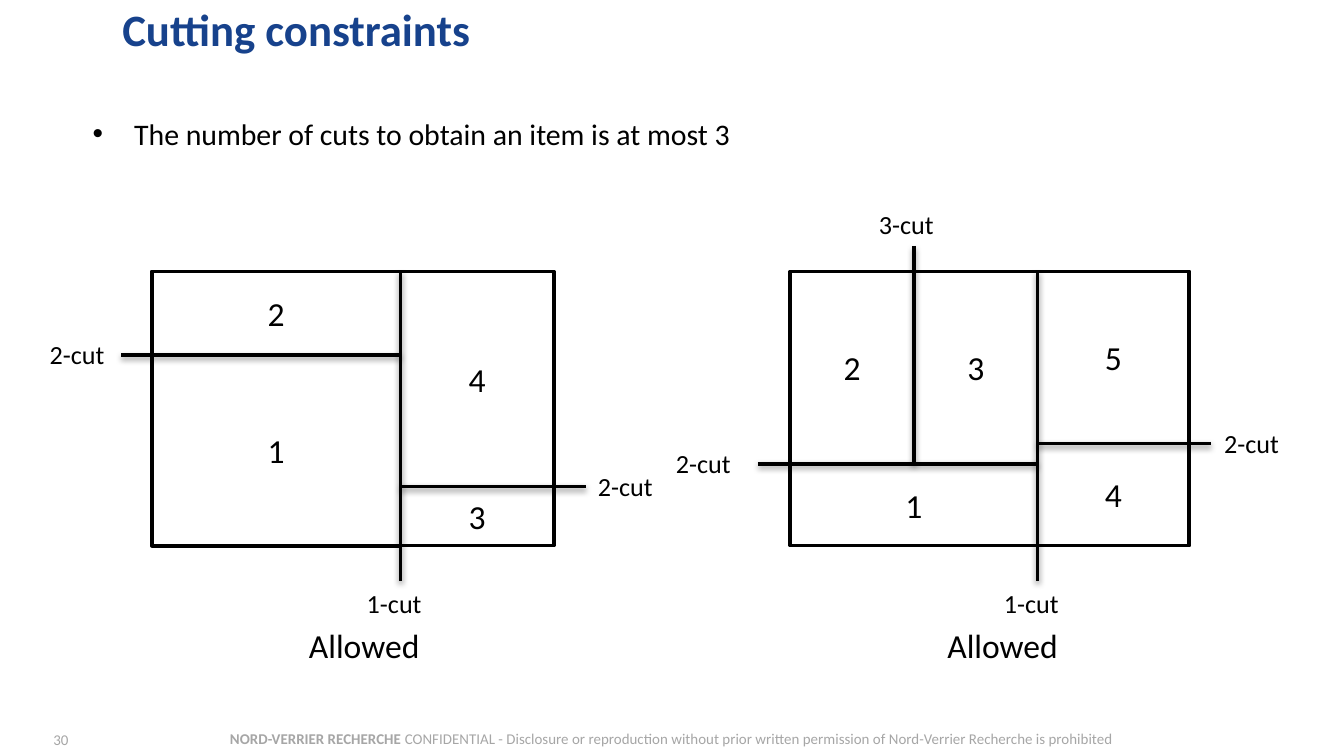
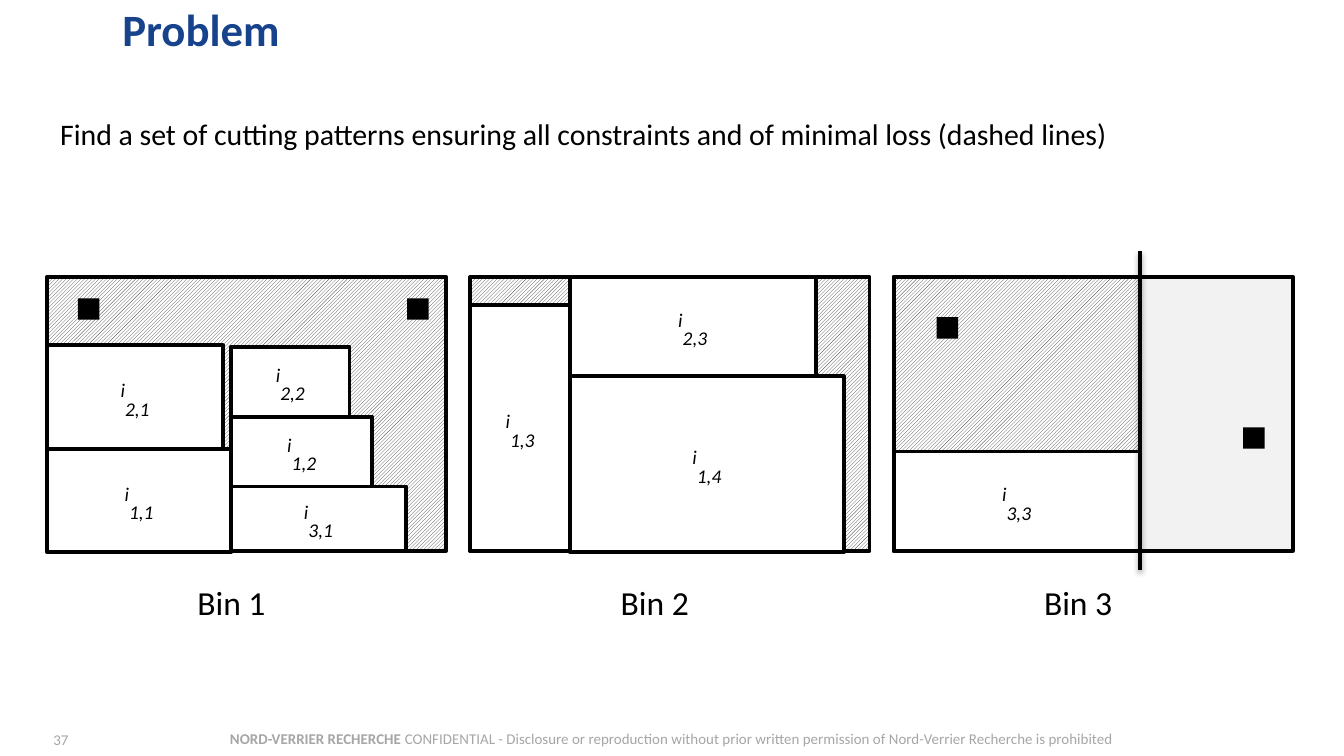
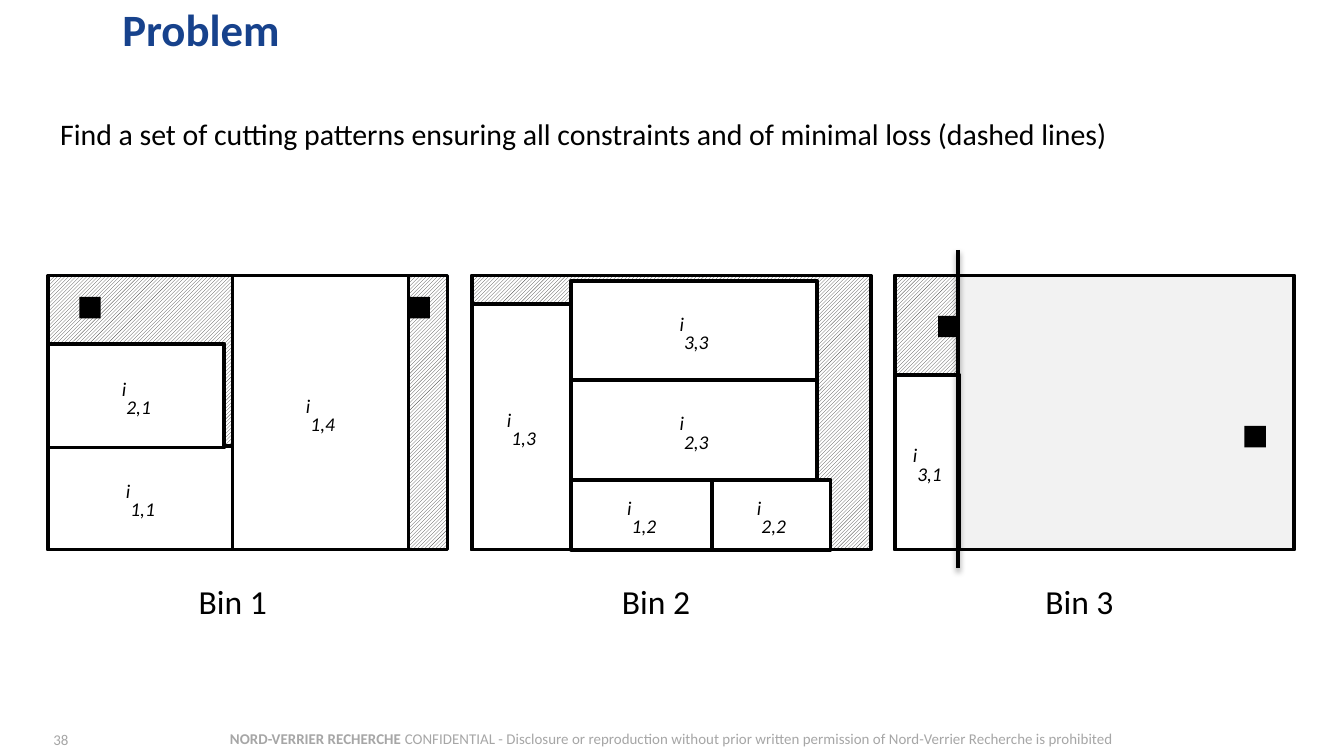
from lxml.etree import SubElement
from pptx import Presentation
from pptx.dml.color import RGBColor
from pptx.enum.dml import MSO_PATTERN
from pptx.enum.shapes import MSO_CONNECTOR, MSO_SHAPE
from pptx.enum.text import MSO_ANCHOR as ANCHOR, MSO_AUTO_SIZE as AUTO_SIZE, PP_ALIGN as ALIGN
from pptx.oxml.ns import qn
from pptx.util import Inches, Pt

BLUE = RGBColor(0x17, 0x42, 0x8C)
BLACK = RGBColor(0, 0, 0)
WHITE = RGBColor(0xFF, 0xFF, 0xFF)
FOOTER_GREY = RGBColor(0xA6, 0xA6, 0xA6)
HATCH_GREY = RGBColor(0x41, 0x41, 0x40)
LEFTOVER_GREY = RGBColor(0xF2, 0xF2, 0xF2)
FONT = "Calibri"
HATCH = "hatch"

BIN_SIZE = (2.97, 2.04)
BIN_STEP = 3.15
DEFECT_SIZE = 0.16
DEFECTS = [[(0.23, 0.16), (2.68, 0.16)], [], [(2.6, 1.12), (0.32, 0.3)]]
ITEM_SIZES = {
    "1,1": (1.37, 0.77), "2,1": (1.31, 0.77),
    "1,2": (1.05, 0.52), "2,2": (0.88, 0.52), "3,1": (1.3, 0.48),
    "1,3": (0.74, 1.83), "2,3": (1.83, 0.74), "3,3": (1.83, 0.74),
    "1,4": (2.04, 1.31),
}


def box(*lengths):
    return [Inches(length) for length in lengths]


def set_font(paragraph, size, color=BLACK, bold=False, italic=False):
    font = paragraph.font
    font.name, font.size, font.bold, font.italic = FONT, Pt(size), bold, italic
    font.color.rgb = color


def add_text(slide, text, left, top, width, height, size, align=ALIGN.LEFT, color=BLACK):
    frame = slide.shapes.add_textbox(*box(left, top, width, height)).text_frame
    frame.word_wrap = True
    paragraph = frame.paragraphs[0]
    paragraph.text = text
    paragraph.alignment = align
    set_font(paragraph, size, color)
    return frame


def add_rectangle(slide, left, top, width, height, fill=None, outlined=True):
    shape = slide.shapes.add_shape(MSO_SHAPE.RECTANGLE, *box(left, top, width, height))
    shape.shadow.inherit = False
    if fill is None:
        shape.fill.background()
    elif fill == HATCH:
        shape.fill.patterned()
        shape.fill.pattern = MSO_PATTERN.DARK_UPWARD_DIAGONAL
        shape.fill.fore_color.rgb = HATCH_GREY
        shape.fill.back_color.rgb = WHITE
    else:
        shape.fill.solid()
        shape.fill.fore_color.rgb = fill
    if outlined:
        shape.line.color.rgb = BLACK
        shape.line.width = Pt(2)
    else:
        shape.line.fill.background()
    return shape


def add_cut(slide, x1, y1, x2, y2):
    cut = slide.shapes.add_connector(MSO_CONNECTOR.STRAIGHT, *box(x1, y1, x2, y2))
    cut.line.color.rgb = BLACK
    cut.line.width = Pt(2)
    effects = SubElement(cut._element.spPr, qn("a:effectLst"))
    shadow = SubElement(effects, qn("a:outerShdw"), blurRad=str(Pt(3.1)), dist=str(Pt(1.6)),
                        dir="5400000", rotWithShape="0")
    color = SubElement(shadow, qn("a:srgbClr"), val=str(BLACK))
    SubElement(color, qn("a:alpha"), val="38000")
    return cut


def add_footer(slide, number):
    frame = add_text(slide, "NORD-VERRIER RECHERCHE ", 0.64, 5.38, 8.72, 0.24, 8,
                     ALIGN.CENTER, FOOTER_GREY)
    paragraph = frame.paragraphs[0]
    paragraph.runs[0].font.bold = True
    paragraph.add_run().text = ("CONFIDENTIAL - Disclosure or reproduction without prior written "
                                "permission of Nord-Verrier Recherche is prohibited")
    frame = add_text(slide, str(number), 0, 5.44, 0.55, 0.13, 8, ALIGN.RIGHT, FOOTER_GREY)
    frame.vertical_anchor = ANCHOR.MIDDLE
    frame.margin_left = frame.margin_right = Inches(0.04)
    frame.margin_top = frame.margin_bottom = 0


def add_titled_slide(presentation, title, number):
    slide = presentation.slides.add_slide(presentation.slide_layouts[5])
    placeholder = slide.shapes.title
    placeholder.left, placeholder.top, placeholder.width, placeholder.height = box(
        0.81, 0.01, 8.94, 0.4)
    frame = placeholder.text_frame
    frame.text = title
    frame.auto_size = AUTO_SIZE.NONE
    frame.vertical_anchor = ANCHOR.TOP
    frame.margin_left = frame.margin_right = Inches(0.1)
    frame.margin_top = frame.margin_bottom = 0
    paragraph = frame.paragraphs[0]
    paragraph.alignment = ALIGN.LEFT
    set_font(paragraph, 24, BLUE, bold=True)
    add_footer(slide, number)
    return slide


def add_statement(slide, text, left, width, bulleted=False):
    frame = slide.shapes.add_textbox(*box(left, 0.84, width, 4.17)).text_frame
    frame.word_wrap = True
    paragraph = frame.paragraphs[0]
    paragraph.text = text
    paragraph.line_spacing = 0.9
    if bulleted:
        properties = paragraph._p.get_or_add_pPr()
        properties.set("marL", str(Inches(0.31)))
        properties.set("indent", str(-Inches(0.31)))
        SubElement(properties, qn("a:buFont"), typeface="Arial")
        SubElement(properties, qn("a:buChar"), char="•")
    set_font(paragraph, 16)


def add_cutting_pattern(slide, left, top, pieces, cuts, labels):
    shapes = {}
    for name, x, y, width, height in pieces:
        shape = add_rectangle(slide, left + x, top + y, width, height)
        paragraph = shape.text_frame.paragraphs[0]
        paragraph.text = name
        set_font(paragraph, 18)
        shapes[name] = shape
    lines = [add_cut(slide, left + x1, top + y1, left + x2, top + y2)
             for x1, y1, x2, y2 in cuts]
    for text, x, y in labels:
        add_text(slide, text, left + x, top + y, 0.71, 0.34, 14)
    add_text(slide, "Allowed", left + 0.44, top + 2.58, 2.28, 0.4, 18, ALIGN.CENTER)
    return shapes, lines


def add_item(slide, name, left, top, turned=False):
    width, height = ITEM_SIZES[name]
    if turned:
        width, height = height, width
    shape = add_rectangle(slide, left, top, width, height, WHITE)
    paragraph = shape.text_frame.paragraphs[0]
    for text, baseline in (("i", 30000), (name, -25000)):
        run = paragraph.add_run()
        run.text = text
        run.font._element.set("baseline", str(baseline))
    set_font(paragraph, 18, italic=True)


def add_bin(slide, left, top, caption, items, defects, waste=None):
    add_rectangle(slide, left, top, *BIN_SIZE, LEFTOVER_GREY if waste else HATCH)
    if waste:
        add_rectangle(slide, left, top, *waste, HATCH)
    for name, x, y, *turned in items:
        add_item(slide, name, left + x, top + y, *turned)
    if waste:
        cut_x = left + waste[0]
        add_cut(slide, cut_x, top - 0.19, cut_x, top + 2.18)
    for x, y in defects:
        add_rectangle(slide, left + x, top + y, DEFECT_SIZE, DEFECT_SIZE, BLACK, outlined=False)
    add_text(slide, caption, left + 1.02, top + 2.22, 0.94, 0.4, 18)


def build_constraints_slide(presentation):
    slide = add_titled_slide(presentation, "Cutting constraints", 30)
    add_statement(slide, "The number of cuts to obtain an item is at most 3", 0.59, 8.82, True)
    add_cutting_pattern(
        slide, 1.13, 2.02,
        [("3", 1.85, 1.6, 1.14, 0.44), ("2", 0, 0, 1.85, 0.62),
         ("4", 1.85, 0, 1.14, 1.6), ("1", 0, 0.62, 1.85, 1.42)],
        [(1.85, 0, 1.85, 2.3), (1.85, 0.62, -0.23, 0.62), (1.85, 1.6, 3.23, 1.6)],
        [("2-cut", -0.86, 0.45), ("1-cut", 1.5, 2.3), ("2-cut", 3.22, 1.43)])
    pieces, cuts = add_cutting_pattern(
        slide, 5.88, 2.02,
        [("2", 0, 0, 0.92, 1.43), ("4", 1.84, 1.28, 1.13, 0.76), ("1", 0, 1.43, 1.84, 0.61),
         ("5", 1.84, 0, 1.13, 1.28), ("3", 0.92, 0, 0.92, 1.43)],
        [(1.84, 0, 1.84, 2.3), (-0.24, 1.43, 1.84, 1.43), (1.84, 1.28, 3.13, 1.28),
         (0.92, -0.19, 0.92, 1.43)],
        [("1-cut", 1.49, 2.3), ("2-cut", -0.95, 1.26), ("3-cut", 0.56, -0.52),
         ("2-cut", 3.13, 1.11)])
    cuts[-1].end_connect(pieces["1"], 0)


def build_problem_slide(presentation, number, left, top, bins, waste):
    slide = add_titled_slide(presentation, "Problem", number)
    add_statement(slide, "Find a set of cutting patterns ensuring all constraints and of "
                         "minimal loss (dashed lines)", 0.35, 9.06)
    for index, (items, defects) in enumerate(zip(bins, DEFECTS)):
        add_bin(slide, left + index * BIN_STEP, top, f"Bin {index + 1}", items, defects,
                waste if index == len(bins) - 1 else None)


def main():
    presentation = Presentation()
    presentation.slide_width = Inches(10)
    presentation.slide_height = Inches(10) * 9 // 16
    build_constraints_slide(presentation)
    build_problem_slide(
        presentation, 37, 0.35, 2.06,
        [[("2,1", 0, 0.51), ("1,2", 1.37, 1.04), ("1,1", 0, 1.28),
          ("3,1", 1.37, 1.56), ("2,2", 1.37, 0.52)],
         [("1,3", 0, 0.21), ("1,4", 0.74, 0.74), ("2,3", 0.74, 0)],
         [("3,3", 0, 1.3)]],
        (1.83, 1.3))
    build_problem_slide(
        presentation, 38, 0.36, 2.05,
        [[("1,4", 1.37, 0, True), ("1,1", 0, 1.27), ("2,1", 0, 0.51)],
         [("1,3", 0, 0.21), ("1,2", 0.74, 1.52), ("2,2", 1.79, 1.52),
          ("2,3", 0.74, 0.78), ("3,3", 0.74, 0.04)],
         [("3,1", 0, 0.74, True)]],
        (0.47, 0.74))
    presentation.save("out.pptx")


if __name__ == "__main__":
    main()
